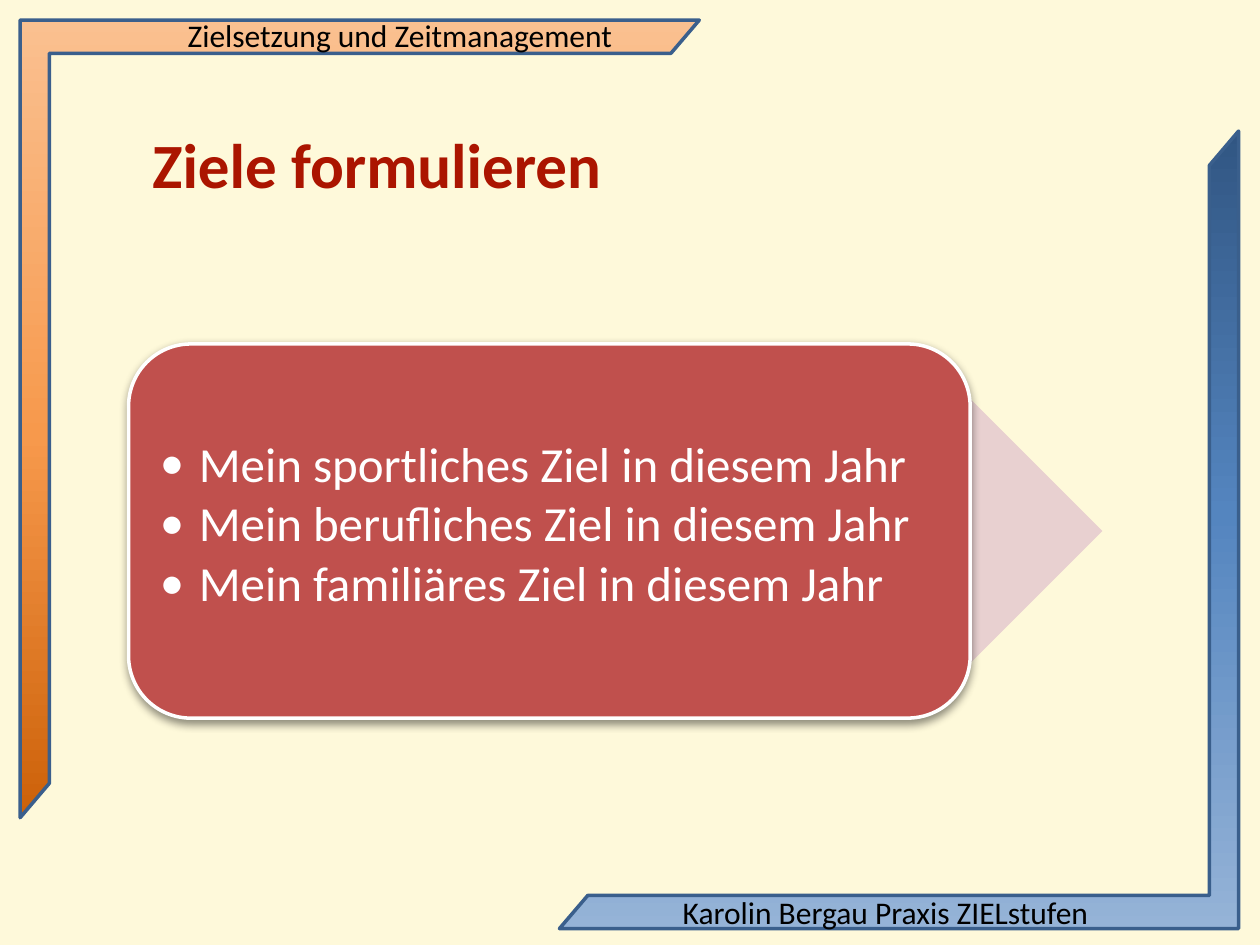
from dataclasses import dataclass
from copy import deepcopy

from lxml import etree
from pptx import Presentation
from pptx.dml.color import RGBColor
from pptx.enum.shapes import MSO_SHAPE
from pptx.enum.text import MSO_ANCHOR
from pptx.oxml import parse_xml
from pptx.oxml.ns import qn
from pptx.util import Inches, Pt

HALF_FRAME = MSO_SHAPE.HALF_FRAME
ARROW = MSO_SHAPE.RIGHT_ARROW
ROUNDED = MSO_SHAPE.ROUNDED_RECTANGLE
TOP, MIDDLE = MSO_ANCHOR.TOP, MSO_ANCHOR.MIDDLE
BLANK_LAYOUT = 6
WIDTH, HEIGHT = 10, 7.5
DRAWING_NS = "http://schemas.openxmlformats.org/drawingml/2006/main"


@dataclass(frozen=True)
class Theme:
    font: str = "Calibri"
    background: str = "FEF9DA"
    frame_line: str = "3A5F8C"
    orange: tuple = ("CC6109", "F7994C", "FAC090")
    blue: tuple = ("315683", "5485BF", "95B3D7")
    stops: tuple = (0, 0.48, 1)
    arrow: str = "E8D0D0"
    card: str = "C0504D"
    light: str = "FFFFFF"
    dark: str = "000000"
    title: str = "AB1500"
    label_size: int = 18
    title_size: int = 36
    goal_size: int = 28
    line_width: int = 2


THEME = Theme()


def rgb(value):
    return RGBColor.from_string(value)


def inches(box):
    return [Inches(length) for length in box]


def add_outline(shapes, kind, box, line=None, fill=None):
    shape = shapes.add_shape(kind, *inches(box))
    shape.shadow.inherit = False
    if fill:
        shape.fill.solid()
        shape.fill.fore_color.rgb = rgb(fill)
    if line:
        shape.line.color.rgb = rgb(line)
        shape.line.width = Pt(THEME.line_width)
    else:
        shape.line.fill.background()
    return shape


def add_text(shapes, box, lines, size, color, bold=False, frame_format=None,
             paragraph_format=None):
    text_frame = shapes.add_textbox(*inches(box)).text_frame
    for key, value in {"word_wrap": True, **(frame_format or {})}.items():
        setattr(text_frame, key, value)
    text_frame.text = "\n".join(lines)
    font_format = {"name": THEME.font, "size": Pt(size), "bold": bold}
    for paragraph in text_frame.paragraphs:
        for key, value in (paragraph_format or {}).items():
            setattr(paragraph, key, value)
        font = paragraph.runs[0].font
        for key, value in font_format.items():
            setattr(font, key, value)
        font.color.rgb = rgb(color)
    return text_frame


def add_bullet(paragraph, indent):
    properties = paragraph._p.get_or_add_pPr()
    properties.set("marL", str(Inches(indent)))
    properties.set("indent", str(-Inches(indent)))
    etree.SubElement(properties, qn("a:buFont")).set("typeface", THEME.font)
    etree.SubElement(properties, qn("a:buChar")).set("char", "•")


def add_card_shadow(card):
    effects = card._element.spPr.find(qn("a:effectLst"))
    effects.append(parse_xml(
        f'<a:outerShdw xmlns:a="{DRAWING_NS}" blurRad="{Pt(5)}" dist="{Pt(2)}" '
        'dir="5400000" rotWithShape="0"><a:srgbClr val="000000">'
        '<a:alpha val="43000"/></a:srgbClr></a:outerShdw>'))


def draw_corner(slide, box, colors, label, label_box, rotation=0):
    """Half frame in a corner, with a label on its horizontal bar."""
    left, top, _, _ = box
    frame = add_outline(slide.shapes, HALF_FRAME, box, THEME.frame_line)
    frame.rotation = rotation
    frame.adjustments[0], frame.adjustments[1] = 0.049, 0.043

    # Three-stop gradient running upwards
    frame.fill.gradient()
    frame.fill.gradient_angle = 90
    stop_list = frame.fill._xPr.find(qn("a:gradFill")).find(qn("a:gsLst"))
    stop_list.append(deepcopy(stop_list[-1]))
    for stop, color, position in zip(frame.fill.gradient_stops, colors, THEME.stops):
        stop.color.rgb = rgb(color)
        stop.position = position

    x, y, w, h = label_box
    add_text(slide.shapes, (left + x, top + y, w, h), [label], THEME.label_size,
             THEME.dark, frame_format={"word_wrap": False})


def draw_title(slide, box, title):
    add_text(
        slide.shapes, box, [title], THEME.title_size, THEME.title, bold=True,
        frame_format={"vertical_anchor": MIDDLE,
                      "margin_left": Inches(0.07), "margin_right": Inches(0.07),
                      "margin_top": Inches(0.04), "margin_bottom": Inches(0.04)},
        paragraph_format={"line_spacing": 0.9, "space_after": Pt(4.5)})


def draw_goals(slide, box, goals):
    """Card with bulleted goals in front of an arrow."""
    left, top, width, height = box
    shapes = slide.shapes.add_group_shape().shapes
    card_width, arrow_offset, padding = 6.68, 0.63, 0.15

    add_outline(shapes, ARROW,
                (left + arrow_offset, top, width - arrow_offset, height),
                fill=THEME.arrow)
    card = add_outline(shapes, ROUNDED, (left, top, card_width, height),
                       THEME.light, THEME.card)
    add_card_shadow(card)

    # Goals start below the top of the card
    goal_box = (left + padding, top + padding,
                card_width - 2 * padding, height - 2 * padding)
    text_frame = add_text(
        shapes, goal_box, goals, THEME.goal_size, THEME.light,
        frame_format={"vertical_anchor": TOP, "margin_top": Inches(0.61)},
        paragraph_format={"line_spacing": 0.9, "space_after": Pt(4)})
    for paragraph in text_frame.paragraphs:
        add_bullet(paragraph, indent=0.31)


def main():
    presentation = Presentation()
    presentation.slide_width, presentation.slide_height = inches((WIDTH, HEIGHT))
    slide = presentation.slides.add_slide(presentation.slide_layouts[BLANK_LAYOUT])
    slide.background.fill.solid()
    slide.background.fill.fore_color.rgb = rgb(THEME.background)

    # Corner frames
    margin, frame_width, frame_height = 0.16, 5.39, 6.33
    draw_corner(slide, (margin, margin, frame_width, frame_height), THEME.orange,
                "Zielsetzung und Zeitmanagement", (1.23, -0.08, 3.61, 0.4))
    draw_corner(slide, (WIDTH - frame_width - 0.17, HEIGHT - frame_height - 0.13,
                        frame_width, frame_height), THEME.blue,
                "Karolin Bergau Praxis ZIELstufen", (0.88, 6, 3.62, 0.4),
                rotation=180)

    # Content
    draw_goals(slide, (1.02, 2.73, 7.73, 2.97),
               [f"Mein {area} Ziel in diesem Jahr"
                for area in ("sportliches", "berufliches", "familiäres")])
    draw_title(slide, (1.14, 0.99, 6.33, 0.69), "Ziele formulieren")

    presentation.save("out.pptx")


if __name__ == "__main__":
    main()
